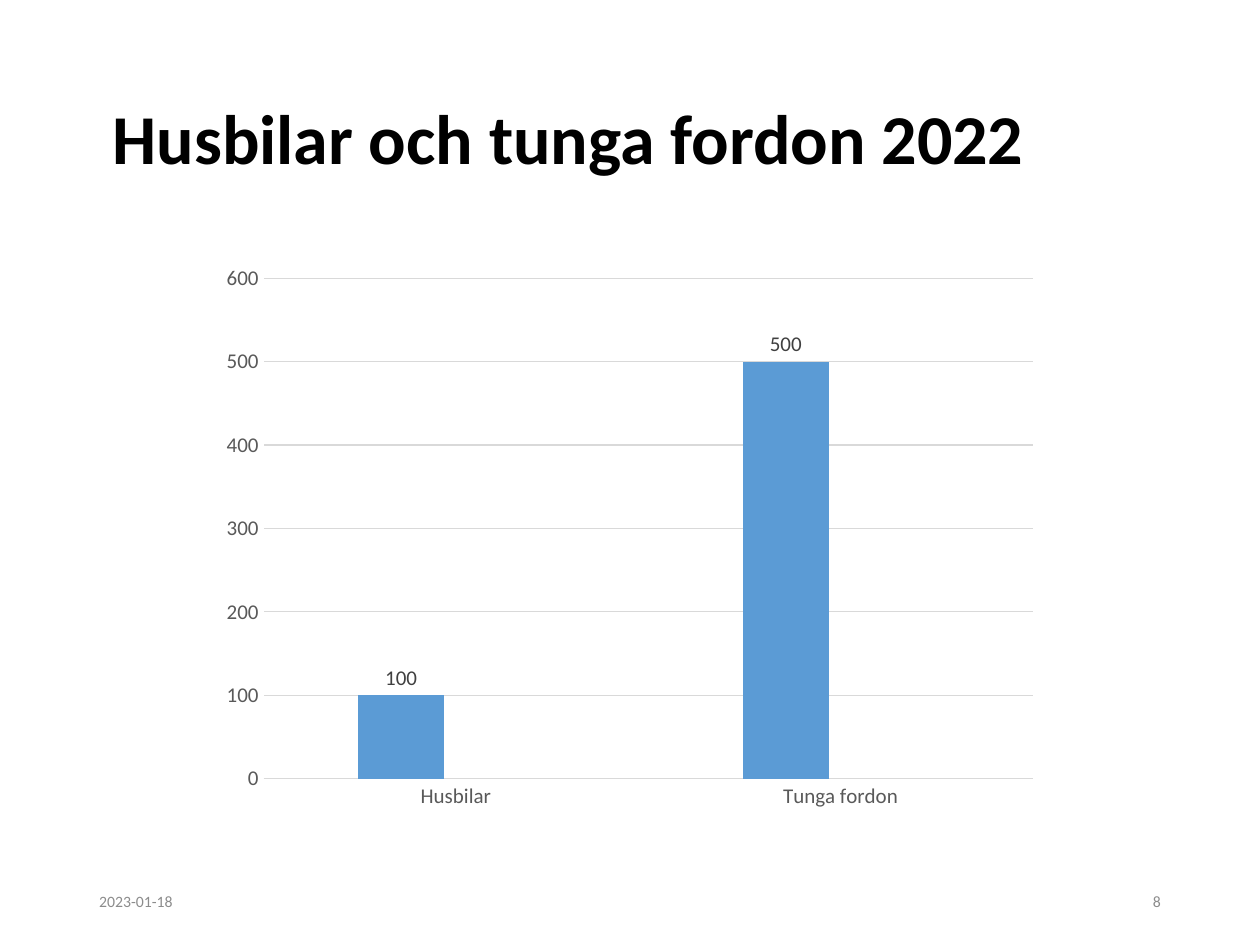
from pptx import Presentation
from pptx.chart.data import CategoryChartData
from pptx.dml.color import RGBColor
from pptx.enum.chart import XL_CHART_TYPE as CT, XL_LABEL_POSITION as LP, XL_TICK_MARK as TM
from pptx.enum.text import MSO_ANCHOR as MA, PP_ALIGN as PA
from pptx.util import Cm, Pt


def rgb(hex_color):
    """Turn a hex string into a colour."""
    return RGBColor.from_string(hex_color)


def set_font(font, size, color, bold=False):
    """Apply the slide's typeface with the given format."""
    for name, value in {"name": "Calibri", "size": Pt(size), "bold": bold}.items():
        setattr(font, name, value)
    font.color.rgb = rgb(color)


def set_line(line, color):
    """Draw a thin line in the given colour."""
    line.color.rgb = rgb(color)
    line.width = Pt(0.75)


def fill_text(shape, text, size, color, bold=False, align=PA.LEFT):
    """Write one formatted paragraph, centred vertically."""
    tf = shape.text_frame
    for name, value in {"word_wrap": True, "vertical_anchor": MA.MIDDLE}.items():
        setattr(tf, name, value)
    p = tf.paragraphs[0]
    p.alignment = align
    r = p.add_run()
    r.text = text
    set_font(r.font, size, color, bold)
    return tf


def add_title(s, text):
    """Move and format the title placeholder."""
    sp = s.shapes.title
    box = {"left": 1.75, "top": 1.02, "width": 21.9, "height": 3.68}
    for name, value in box.items():
        setattr(sp, name, Cm(value))
    tf = fill_text(sp, text, 40, "000000", bold=True)
    tf.margin_left = Cm(0.52)
    tf.paragraphs[0].line_spacing = 0.9


def add_footer(s, left, text, align):
    """Add a small grey text at the foot of the slide."""
    sp = s.shapes.add_textbox(Cm(left), Cm(17.65), Cm(5.72), Cm(1.02))
    fill_text(sp, text, 9, "8C8C8C", align=align)


def format_axes(chart):
    """Format the two axes and the gridlines."""
    for axis in (chart.category_axis, chart.value_axis):
        axis.major_tick_mark = axis.minor_tick_mark = TM.NONE
        set_font(axis.tick_labels.font, 12, "595959")
    set_line(chart.category_axis.format.line, "D9D9D9")
    axis = chart.value_axis
    for name, value in {"minimum_scale": 0, "maximum_scale": 600, "major_unit": 100}.items():
        setattr(axis, name, value)
    axis.format.line.fill.background()
    set_line(axis.major_gridlines.format.line, "D9D9D9")


def add_column_chart(s, categories, series):
    """Add a clustered column chart with value labels on the first series."""
    data = CategoryChartData()
    data.categories = categories
    for name, values, _ in series:
        data.add_series(name, values)
    chart = s.shapes.add_chart(
        CT.COLUMN_CLUSTERED, Cm(4.23), Cm(5.13), Cm(16.93), Cm(11.4), data
    ).chart
    chart.has_title = chart.has_legend = False
    set_font(chart.font, 10, "000000")
    format_axes(chart)
    plot = chart.plots[0]
    for name, value in {"gap_width": 219, "overlap": -27, "vary_by_categories": False}.items():
        setattr(plot, name, value)
    for ser, (_, _, color) in zip(plot.series, series):
        ser.format.fill.solid()
        ser.format.fill.fore_color.rgb = rgb(color)
    labels = plot.series[0].data_labels
    for name, value in {"show_value": True, "position": LP.OUTSIDE_END}.items():
        setattr(labels, name, value)
    set_font(labels.font, 12, "404040")


def main():
    """Build the slide and save it."""
    prs = Presentation()
    prs.slide_width, prs.slide_height = Cm(25.4), Cm(19.05)
    s = prs.slides.add_slide(prs.slide_layouts[5])
    add_title(s, "Husbilar och tunga fordon 2022")
    add_footer(s, 1.75, "2023-01-18", PA.LEFT)
    add_footer(s, 17.93, "8", PA.RIGHT)
    add_column_chart(s, ["Husbilar", "Tunga fordon"], [
        ("Series 1", (100, 500), "5B9BD5"),
        ("Series 2", (None, None), "ED7D31"),
    ])
    prs.save("out.pptx")


if __name__ == "__main__":
    main()
